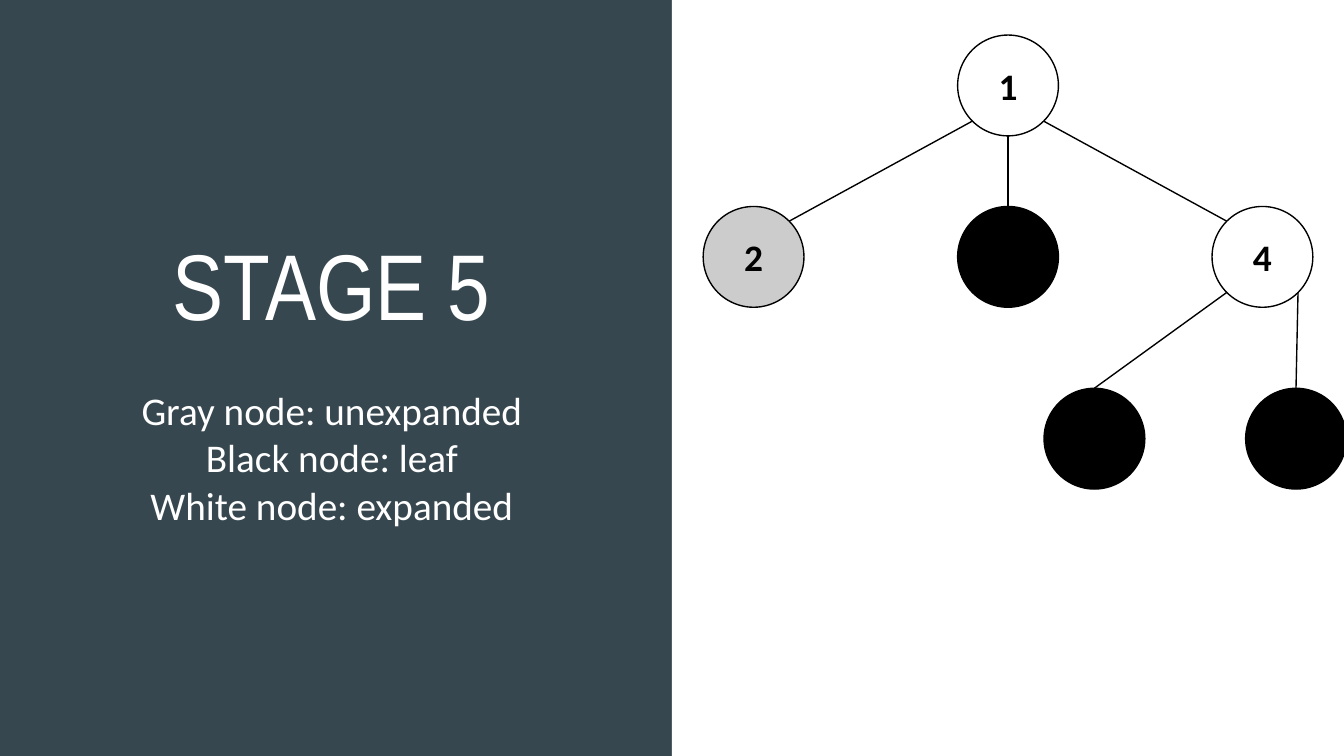
from math import sqrt

from lxml.etree import SubElement
from pptx import Presentation
from pptx.dml.color import RGBColor
from pptx.enum.shapes import MSO_CONNECTOR, MSO_SHAPE
from pptx.enum.text import MSO_ANCHOR, PP_ALIGN
from pptx.oxml.ns import qn
from pptx.util import Pt

WHITE = RGBColor(0xFF, 0xFF, 0xFF)
BLACK = RGBColor(0x00, 0x00, 0x00)
GRAY = RGBColor(0xCC, 0xCC, 0xCC)
SLATE = RGBColor(0x37, 0x47, 0x4F)

WIDE, HIGH = 720, 405
SIZE = 54  # node diameter
HALF = SIZE / 2
DIAG = HALF / sqrt(2)

# Points on a node's rim, as offsets from its centre
RIM = {
    "top": (0, -HALF),
    "foot": (0, HALF),
    "top left": (-DIAG, -DIAG),
    "top right": (DIAG, -DIAG),
    "low left": (-DIAG, DIAG),
    "low right": (DIAG, DIAG),
}


class Board:
    title = {"name": "Arial Narrow", "size": Pt(50)}
    body = {"name": "Calibri", "size": Pt(21)}
    label = {"name": "Calibri", "size": Pt(20), "bold": True}

    def __init__(self, slide):
        self.slide = slide

    def fill_para(self, para, text, style, color):
        para.alignment = PP_ALIGN.CENTER
        run = para.add_run()
        run.text = text
        for key, value in style.items():
            setattr(run.font, key, value)
        run.font.color.rgb = color

    def shape(self, kind, x, y, w, h, fill):
        item = self.slide.shapes.add_shape(kind, Pt(x), Pt(y), Pt(w), Pt(h))
        item.shadow.inherit = False
        item.fill.solid()
        item.fill.fore_color.rgb = fill
        item.line.fill.background()
        return item

    def node(self, x, y, fill, text):
        item = self.shape(MSO_SHAPE.OVAL, x - HALF, y - HALF, SIZE, SIZE, fill)
        item.line.color.rgb = BLACK
        item.line.width = Pt(0.75)
        if text:
            frame = item.text_frame
            frame.vertical_anchor = MSO_ANCHOR.MIDDLE
            self.fill_para(frame.paragraphs[0], text, self.label, BLACK)

    def edge(self, x1, y1, x2, y2):
        line = self.slide.shapes.add_connector(
            MSO_CONNECTOR.STRAIGHT, Pt(x1), Pt(y1), Pt(x2), Pt(y2))
        line.line.color.rgb = BLACK
        line.line.width = Pt(0.75)
        SubElement(line._element.spPr, qn("a:effectLst"))

    def text(self, x, y, w, h, title, lines):
        frame = self.slide.shapes.add_textbox(Pt(x), Pt(y), Pt(w), Pt(h)).text_frame
        layout = {"word_wrap": True, "margin_left": Pt(7.2), "margin_right": Pt(7.2),
                  "margin_top": Pt(7.2), "margin_bottom": Pt(7.2)}
        for key, value in layout.items():
            setattr(frame, key, value)
        head = frame.paragraphs[0]
        head.space_after = Pt(25.5)
        self.fill_para(head, title, self.title, WHITE)
        for line in lines:
            self.fill_para(frame.add_paragraph(), line, self.body, WHITE)


def main():
    deck = Presentation()
    deck.slide_width, deck.slide_height = Pt(WIDE), Pt(HIGH)
    slide = deck.slides.add_slide(deck.slide_layouts[6])
    board = Board(slide)

    # Dark left half, white right half
    slide.background.fill.solid()
    slide.background.fill.fore_color.rgb = SLATE
    board.shape(MSO_SHAPE.RECTANGLE, WIDE / 2, 0, WIDE / 2, HIGH, WHITE)

    # Title and legend
    board.text(18.7, 114.5, 318.2, 175.7, "STAGE 5", [
        "Gray node: unexpanded", "Black node: leaf", "White node: expanded"])

    # Tree nodes: centre, fill, label
    nodes = {
        "root": (540, 45.8, WHITE, "1"),
        "left": (403.7, 137.6, GRAY, "2"),
        "mid": (540, 137.6, BLACK, ""),
        "right": (676.3, 137.6, WHITE, "4"),
        "leaf a": (586.3, 235, BLACK, ""),
        "leaf b": (694.3, 235, BLACK, ""),
    }
    for node in nodes.values():
        board.node(*node)

    # Tree edges: parent, rim point, child, rim point
    edges = [
        ("root", "low left", "left", "top right"),
        ("root", "foot", "mid", "top"),
        ("root", "low right", "right", "top left"),
        ("right", "low left", "leaf a", "top"),
        ("right", "low right", "leaf b", "top"),
    ]
    for start, out, end, into in edges:
        ends = []
        for name, rim in ((start, out), (end, into)):
            ends += [nodes[name][i] + RIM[rim][i] for i in (0, 1)]
        board.edge(*ends)

    deck.save("out.pptx")


if __name__ == "__main__":
    main()
